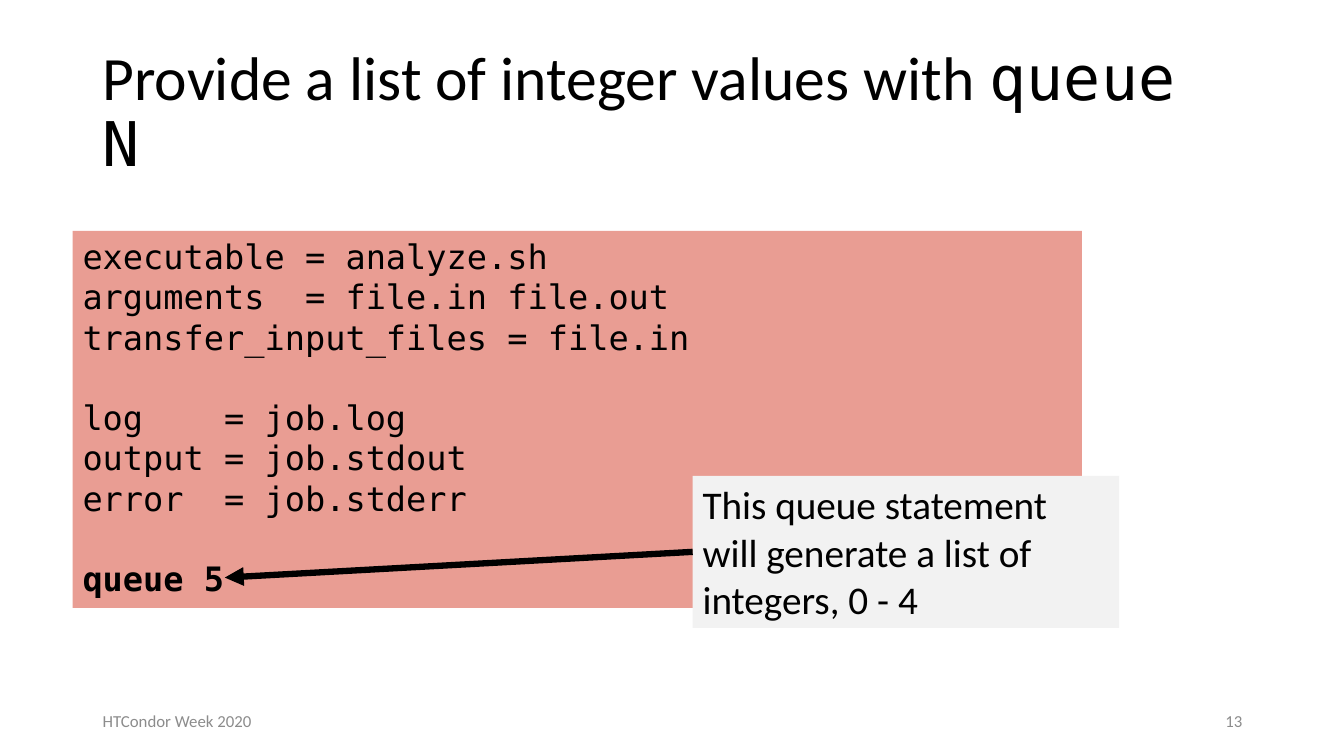
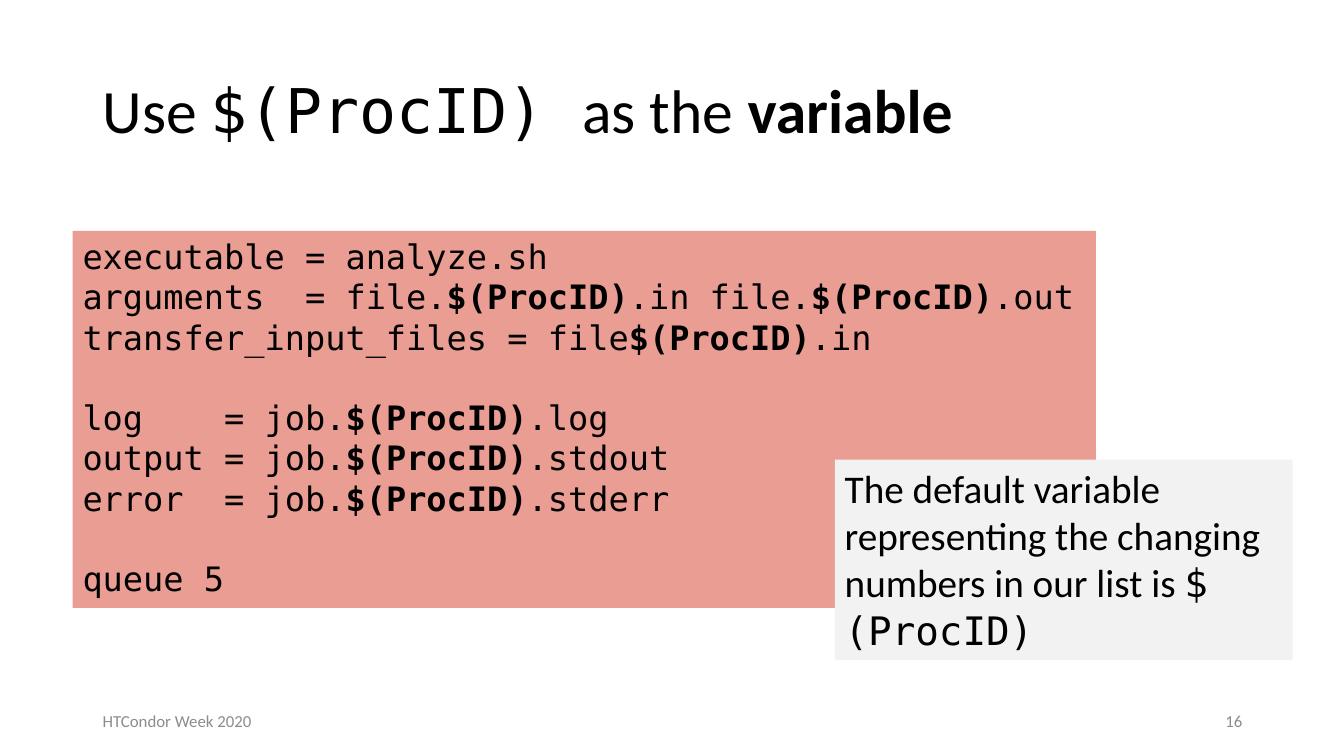
"""Two slides on queueing jobs with a list of integers."""
from pptx import Presentation
from pptx.util import Inches, Pt
from pptx.dml.color import RGBColor
from pptx.enum import shapes, text
from pptx.oxml.ns import qn
from lxml import etree

HUES = {"ink": "000000", "code": "E99D93", "note": "F2F2F2", "foot": "8C8C8C"}
SANS, MONO = "Calibri", "DejaVu Sans Mono"
FOOT = "HTCondor Week 2020"
LEFT, WIDE = 0.92, 11.5
LINE = 28.8

# Asterisks enclose the bold parts of a code line.
SLIDES = [
    {
        "title": [("Provide a list of integer values with ", SANS, False),
                  ("queue N", MONO, False)],
        "wide": 10.01,
        "code": [
            ["executable = analyze.sh",
             "arguments  = file.in file.out",
             "transfer_input_files = file.in"],
            ["log    = job.log",
             "output = job.stdout",
             "error  = job.stderr"],
            ["*queue 5*"],
        ],
        "note": [("This queue statement will generate a list of integers, 0 - 4",
                  SANS, False)],
        "spot": (6.87, 4.72, 4.23, 1.51),
        "tip": (2.23, 5.73),
        "page": "13",
    },
    {
        "title": [("Use ", SANS, False), ("$(ProcID) ", MONO, False),
                  ("as the ", SANS, False), ("variable", SANS, True)],
        "wide": 10.15,
        "code": [
            ["executable = analyze.sh",
             "arguments  = file.*$(ProcID)*.in file.*$(ProcID)*.out",
             "transfer_input_files = file*$(ProcID)*.in"],
            ["log    = job.*$(ProcID)*.log",
             "output = job.*$(ProcID)*.stdout",
             "error  = job.*$(ProcID)*.stderr"],
            ["queue 5"],
        ],
        "note": [("The default variable representing the changing numbers "
                  "in our list is ", SANS, False), ("$(ProcID)", MONO, False)],
        "spot": (8.28, 4.56, 4.54, 1.99),
        "tip": None,
        "page": "16",
    },
]


def tint(name):
    return RGBColor.from_string(HUES[name])


def write(para, runs, size, hue="ink"):
    for words, font, bold in runs:
        run = para.add_run()
        run.text = words
        run.font.name, run.font.size, run.font.bold = font, Pt(size), bold
        run.font.color.rgb = tint(hue)


def label(slide, spot, runs, size, hue="ink", align=text.PP_ALIGN.LEFT):
    frame = slide.shapes.add_textbox(*map(Inches, spot)).text_frame
    frame.word_wrap = True
    frame.vertical_anchor = text.MSO_ANCHOR.MIDDLE
    para = frame.paragraphs[0]
    para.alignment = align
    write(para, runs, size, hue)
    return para


def panel(slide, spot, hue):
    box = slide.shapes.add_shape(shapes.MSO_SHAPE.RECTANGLE, *map(Inches, spot))
    box.shadow.inherit = False
    box.fill.solid()
    box.fill.fore_color.rgb = tint(hue)
    box.line.fill.background()
    box.text_frame.word_wrap = True
    box.text_frame.vertical_anchor = text.MSO_ANCHOR.TOP
    box.text_frame.paragraphs[0].alignment = text.PP_ALIGN.LEFT
    return box


def listing(slide, wide, blocks):
    frame = panel(slide, (0.72, 2.29, wide, 3.74), "code").text_frame
    for b, block in enumerate(blocks):
        for n, line in enumerate(block):
            first = b == n == 0
            para = frame.paragraphs[0] if first else frame.add_paragraph()
            para.alignment = text.PP_ALIGN.LEFT
            if b and n == 0:
                para.space_before = Pt(LINE)
            parts = enumerate(line.split("*"))
            write(para, [(p, MONO, i % 2 == 1) for i, p in parts if p], 24)


def arrow(slide, box, tip):
    line = slide.shapes.add_connector(
        shapes.MSO_CONNECTOR.STRAIGHT, box.left, box.top, *map(Inches, tip))
    line.begin_connect(box, 1)
    line.line.color.rgb = tint("ink")
    line.line.width = Pt(4.5)
    etree.SubElement(line.line._get_or_add_ln(), qn("a:tailEnd"), type="triangle")
    etree.SubElement(line._element.spPr, qn("a:effectLst"))


def build(deck, data):
    slide = deck.slides.add_slide(deck.slide_layouts[6])
    title = label(slide, (LEFT, 0.4, WIDE, 1.45), data["title"], 44)
    title.line_spacing = 0.9
    listing(slide, data["wide"], data["code"])
    label(slide, (LEFT, 6.95, 3, 0.4), [(FOOT, SANS, False)], 12, "foot")
    label(slide, (LEFT + WIDE - 3, 6.95, 3, 0.4), [(data["page"], SANS, False)],
          12, "foot", text.PP_ALIGN.RIGHT)
    note = panel(slide, data["spot"], "note")
    write(note.text_frame.paragraphs[0], data["note"], 28)
    if data["tip"]:
        arrow(slide, note, data["tip"])


def main():
    deck = Presentation()
    deck.slide_width, deck.slide_height = Inches(13.33), Inches(7.5)
    for data in SLIDES:
        build(deck, data)
    deck.save("out.pptx")


if __name__ == "__main__":
    main()
